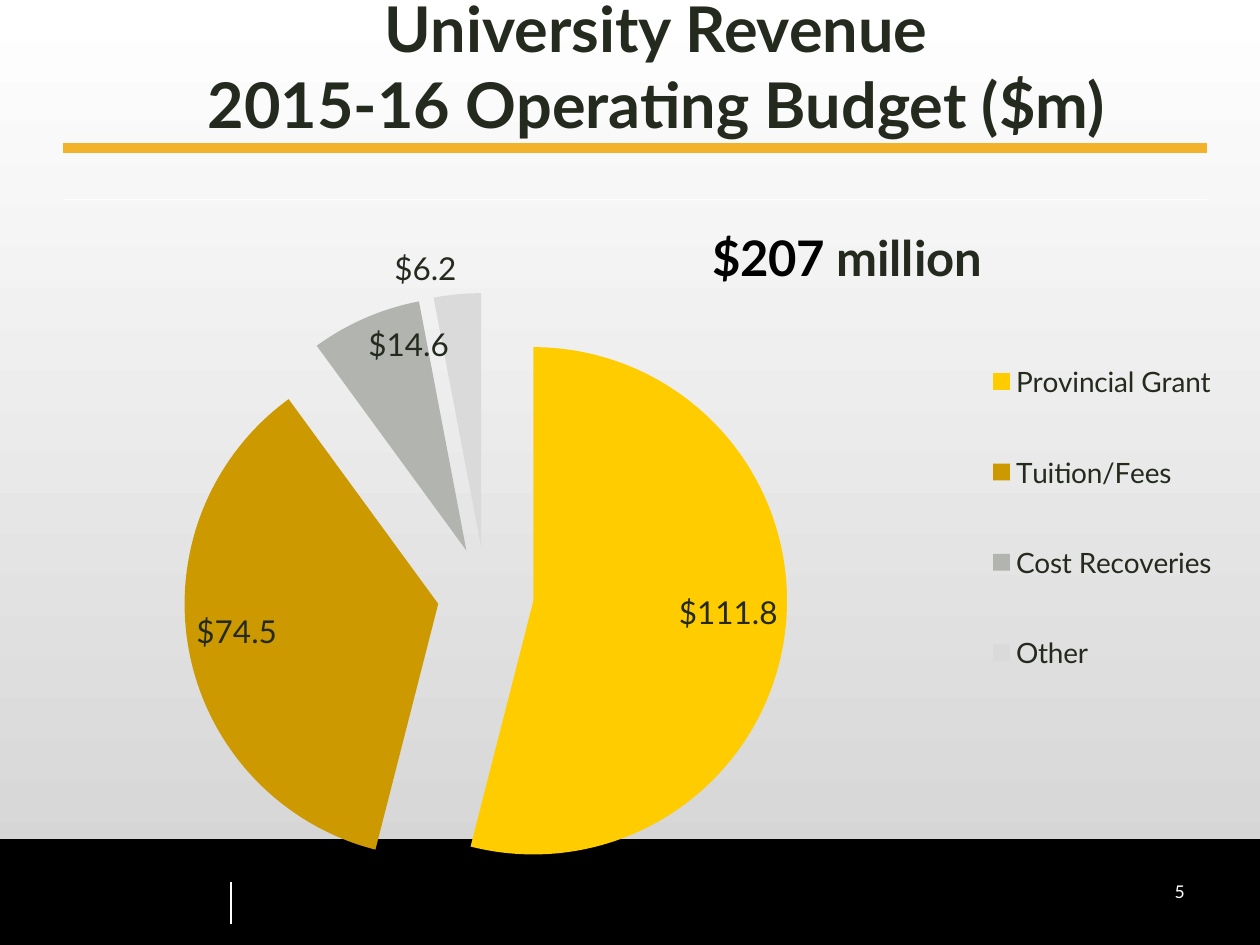
from dataclasses import dataclass

from lxml.etree import SubElement
from pptx import Presentation
from pptx.chart.data import CategoryChartData
from pptx.dml.color import RGBColor
from pptx.enum.chart import XL_CHART_TYPE, XL_LABEL_POSITION, XL_LEGEND_POSITION
from pptx.enum.shapes import MSO_CONNECTOR, MSO_SHAPE
from pptx.enum.text import MSO_ANCHOR, MSO_AUTO_SIZE, PP_ALIGN
from pptx.oxml import parse_xml
from pptx.oxml.ns import nsdecls, qn
from pptx.util import Pt


@dataclass(frozen=True)
class Theme:
    font: str = "Lato"
    ink: str = "252A1E"
    black: str = "000000"
    white: str = "FFFFFF"
    shade: str = "D2D2D2"
    gold: str = "F2B32A"
    slices: tuple = ("FFCC00", "CC9900", "B1B4AF", "DADADA")
    title: int = 36
    total: int = 28
    label: int = 18
    legend: int = 16
    number: int = 10


THEME = Theme()
REVENUE = {"Provincial Grant": 111.8, "Tuition/Fees": 74.5, "Cost Recoveries": 14.6, "Other": 6.2}


def color(value):
    return RGBColor.from_string(value)


def style(font, size, value, bold=False):
    font.name = THEME.font
    font.size = Pt(size)
    font.bold = bold
    font.color.rgb = color(value)


def place(shape, box):
    shape.left, shape.top, shape.width, shape.height = (Pt(length) for length in box)


def add_line(page, start, end, value, width):
    line = page.shapes.add_connector(MSO_CONNECTOR.STRAIGHT, *(Pt(n) for n in start + end))
    line.line.color.rgb = color(value)
    line.line.width = Pt(width)
    SubElement(line.element.spPr, qn("a:effectLst"))


def add_background(page):
    fill = page.background.fill
    fill.gradient()
    fill.gradient_angle = 270
    for stop, value in zip(fill.gradient_stops, (THEME.white, THEME.shade)):
        stop.color.rgb = color(value)
    fill.gradient_stops[0].position = 0
    fill.gradient_stops[1].position = 1


def add_footer(page, box, number):
    left, top, width, height = box
    band = page.shapes.add_shape(MSO_SHAPE.RECTANGLE, *(Pt(length) for length in box))
    band.shadow.inherit = False
    band.fill.solid()
    band.fill.fore_color.rgb = color(THEME.black)
    band.line.color.rgb = color(THEME.black)
    band.line.width = Pt(0.75)
    add_line(page, (left + 132, top + 24), (left + 132, top + 48), THEME.white, 0.75)

    number_box = page.shapes.add_textbox(
        Pt(left + width - 204), Pt(top + 20), Pt(168), Pt(29))
    number_box.text_frame.word_wrap = True
    number_box.text_frame.text = number
    para = number_box.text_frame.paragraphs[0]
    para.alignment = PP_ALIGN.RIGHT
    style(para.runs[0].font, THEME.number, THEME.white)


def add_header(page, box):
    left, top, width, height = box
    for y, value, weight in ((top + 93, THEME.white, 0.75), (top + 63.5, THEME.gold, 6)):
        add_line(page, (left - 12, y), (left + 642, y), value, weight)
    title = page.shapes.title
    place(title, box)
    frame = title.text_frame
    frame.word_wrap = True
    frame.auto_size = MSO_AUTO_SIZE.NONE
    frame.vertical_anchor = MSO_ANCHOR.BOTTOM
    frame.text = "University Revenue\v2015-16 Operating Budget ($m)"
    para = frame.paragraphs[0]
    para.alignment = PP_ALIGN.CENTER
    for span in para.runs:
        style(span.font, THEME.title, THEME.ink, bold=True)


def set_layout(part, index, **fractions):
    """Place a chart part by fractions of the chart area."""
    for old in part.findall(qn("c:layout")):
        part.remove(old)
    layout = parse_xml(f"<c:layout {nsdecls('c')}/>")
    manual = SubElement(layout, qn("c:manualLayout"))
    if "w" in fractions and part.tag == qn("c:plotArea"):
        SubElement(manual, qn("c:layoutTarget")).set("val", "inner")
    for axis in "xy":
        SubElement(manual, qn(f"c:{axis}Mode")).set("val", "edge")
    for name, fraction in fractions.items():
        SubElement(manual, qn(f"c:{name}")).set("val", str(fraction))
    part.insert(index, layout)


def add_revenue_chart(page, box):
    data = CategoryChartData(number_format='"$"#,##0.0')
    data.categories = list(REVENUE)
    data.add_series("Series 1", list(REVENUE.values()))
    chart = page.shapes.add_chart(
        XL_CHART_TYPE.PIE, *(Pt(length) for length in box), data).chart
    style(chart.font, THEME.label, THEME.ink)

    chart.has_title = True
    para = chart.chart_title.text_frame.paragraphs[0]
    for words, value in (("$207", THEME.black), (" million", THEME.ink)):
        span = para.add_run()
        span.text = words
        style(span.font, THEME.total, value, bold=True)

    chart.has_legend = True
    chart.legend.position = XL_LEGEND_POSITION.RIGHT
    chart.legend.include_in_layout = False
    style(chart.legend.font, THEME.legend, THEME.ink)

    plot = chart.plots[0]
    plot.vary_by_categories = True
    plot.has_data_labels = True
    plot.data_labels.show_value = True
    plot.data_labels.show_percentage = False
    plot.data_labels.position = XL_LABEL_POSITION.INSIDE_END
    style(plot.data_labels.font, THEME.label, THEME.ink)

    series = plot.series[0]
    for index, value in enumerate(THEME.slices):
        fill = series.points[index].format.fill
        fill.solid()
        fill.fore_color.rgb = color(value)
        label = series.points[index].data_label
        style(label.font, THEME.label, THEME.ink)
        label.position = XL_LABEL_POSITION.INSIDE_END
    label.position = XL_LABEL_POSITION.OUTSIDE_END
    explosion = parse_xml(f'<c:explosion {nsdecls("c")} val="19"/>')
    series.points[0].format.fill  # the first point sits right after the explosion
    series._element.find(qn("c:dPt")).addprevious(explosion)

    area = chart.element.find(qn("c:chart"))
    set_layout(area.find(qn("c:title")), 1, x=0.58, y=0.11)
    set_layout(area.find(qn("c:plotArea")), 0, x=0.18, y=0.2, w=0.46, h=0.78)
    set_layout(area.find(qn("c:legend")), 1, x=0.79, y=0.22, w=0.18, h=0.54)


def main():
    deck = Presentation()
    deck.slide_width, deck.slide_height = Pt(720), Pt(540)
    page = deck.slides.add_slide(deck.slide_layouts[5])
    add_background(page)
    add_footer(page, (0, 480, 720, 60), "5")
    add_header(page, (48, 21, 654, 63))
    add_revenue_chart(page, (-30, 78, 750, 444))
    deck.save("out.pptx")


if __name__ == "__main__":
    main()
